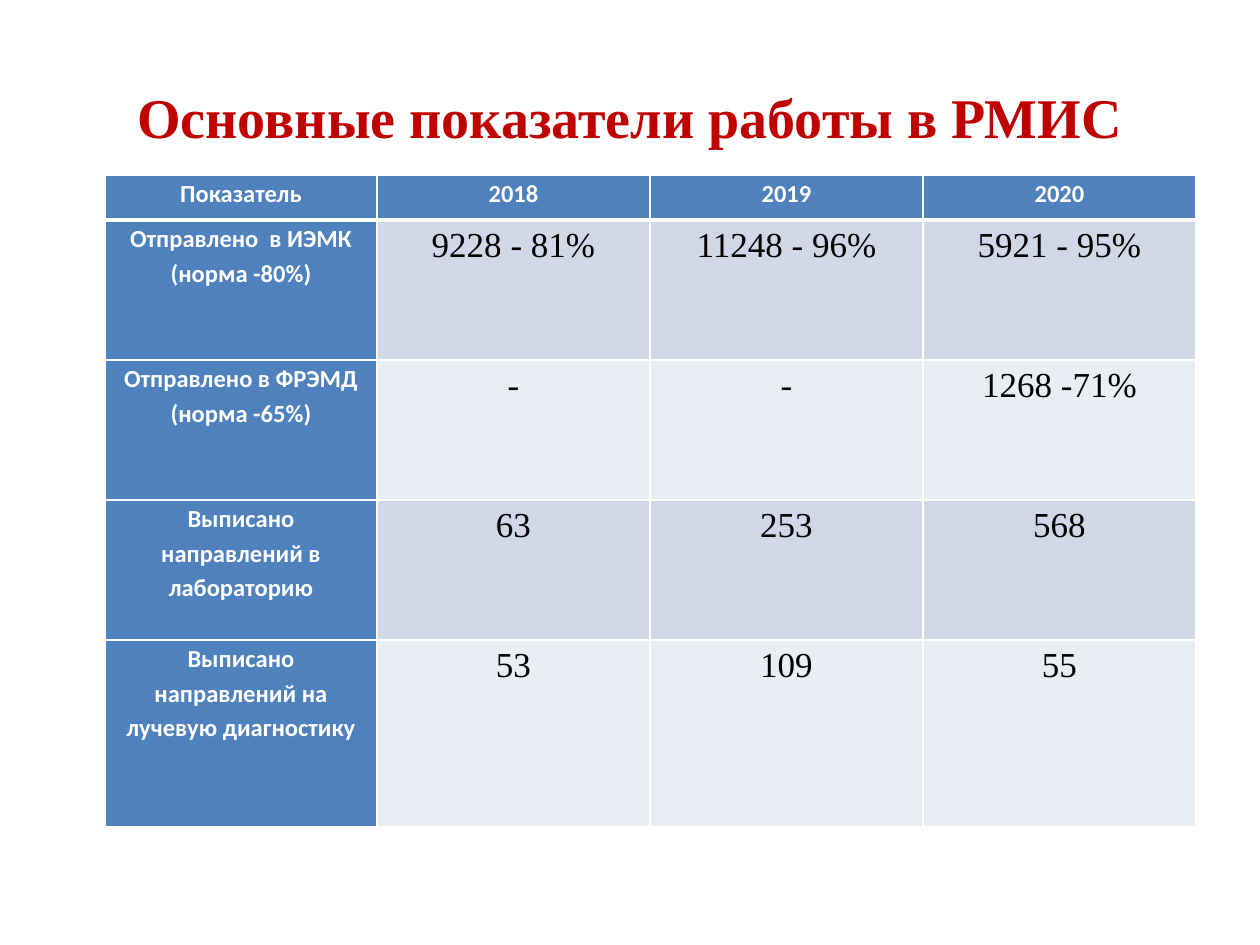
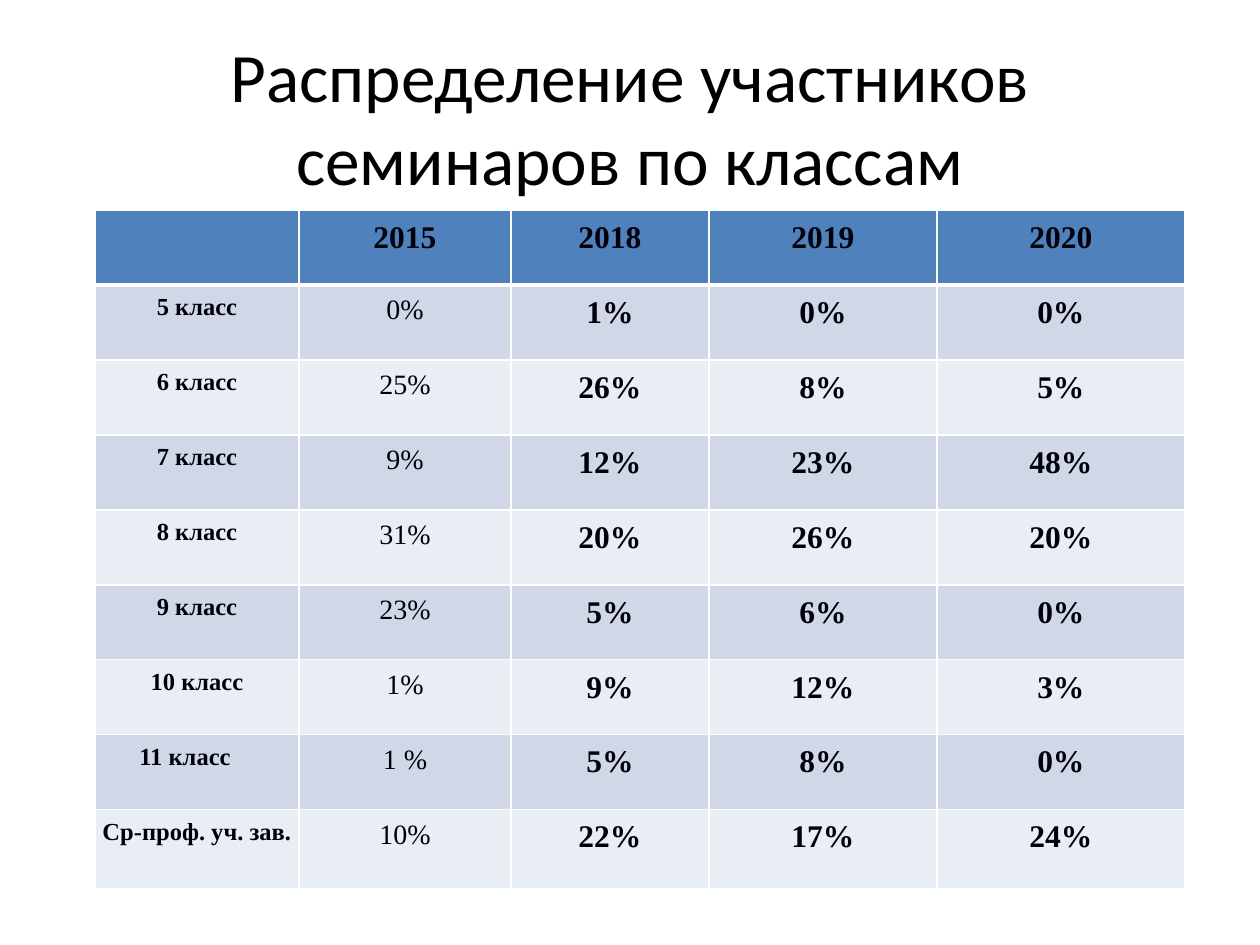
"""Build two slides, each a title over a banded table."""
from lxml import etree
from pptx import Presentation
from pptx import util as u
from pptx.dml.color import RGBColor
from pptx.enum import text
from pptx.oxml import ns

PX = 914400 / 126
SERIF, SANS = "Times New Roman", "Calibri"
RED = RGBColor(0xC0, 0x00, 0x00)
BLACK = RGBColor(0x00, 0x00, 0x00)
INK = RGBColor(0x00, 0x00, 0x0A)
WHITE = RGBColor(0xFF, 0xFF, 0xFF)
BLUE = RGBColor(0x4F, 0x81, 0xBD)
BANDS = [RGBColor(0xD0, 0xD8, 0xE8), RGBColor(0xE9, 0xED, 0xF4)]

TITLE_BOX = (63, 38, 1134, 157)
LABEL = (SANS, 14, WHITE, True)
FIGURE = (SERIF, 20, BLACK, False)
YEAR = (SERIF, 18, INK, True)
GRADE = (SERIF, 14, INK, True)
FIRST_YEAR = (SERIF, 16, INK, False)

WORK = {
    "title": "Основные показатели работы в РМИС",
    "title_font": (SERIF, 32, RED, True),
    "corner": (105, 175),
    "columns": [272, 273, 273, 273],
    "heights": [45, 140, 140, 140, 187],
    "margins": (9, 0),
    "space_after": 0,
    "blue_labels": True,
    "head_font": LABEL,
    "fonts": [LABEL, FIGURE, FIGURE, FIGURE],
    "indents": {},
    "rows": [
        ("Показатель", "2018", "2019", "2020"),
        ("Отправлено  в ИЭМК (норма -80%)", "9228 - 81%", "11248 - 96%", "5921 - 95%"),
        ("Отправлено в ФРЭМД (норма -65%)", "-", "-", "1268 -71%"),
        ("Выписано направлений в лабораторию", "63", "253", "568"),
        ("Выписано направлений на лучевую диагностику", "53", "109", "55"),
    ],
}

SEMINARS = {
    "title": "Распределение участников семинаров по классам",
    "title_font": (SANS, 39.6, BLACK, False),
    "corner": (95, 210),
    "columns": [204, 212, 198, 228, 248],
    "heights": [75] * 8 + [79],
    "margins": (5, 5),
    "space_after": 10,
    "blue_labels": False,
    "head_font": YEAR,
    "fonts": [GRADE, FIRST_YEAR, YEAR, YEAR, YEAR],
    "indents": {"11 класс": 24},
    "rows": [
        ("", "2015", "2018", "2019", "2020"),
        ("5 класс", "0%", "1%", "0%", "0%"),
        ("6 класс", "25%", "26%", "8%", "5%"),
        ("7 класс", "9%", "12%", "23%", "48%"),
        ("8 класс", "31%", "20%", "26%", "20%"),
        ("9 класс", "23%", "5%", "6%", "0%"),
        ("10 класс", "1%", "9%", "12%", "3%"),
        ("11 класс", "1 %", "5%", "8%", "0%"),
        ("Ср-проф. уч. зав.", "10%", "22%", "17%", "24%"),
    ],
}


def px(length):
    return u.Emu(round(length * PX))


def write(para, words, font):
    para.text = words
    para.alignment = text.PP_ALIGN.CENTER
    para.font.name, size, color, para.font.bold = font
    para.font.size = u.Pt(size)
    para.font.color.rgb = color


def add_title(page, words, font):
    box = page.shapes.add_textbox(*map(px, TITLE_BOX))
    frame = box.text_frame
    frame.word_wrap = True
    frame.vertical_anchor = text.MSO_ANCHOR.MIDDLE
    write(frame.paragraphs[0], words, font)


def add_borders(cell, top, bottom):
    properties = cell._tc.get_or_add_tcPr()
    for side, points in (("L", 1), ("R", 1), ("T", top), ("B", bottom)):
        line = etree.SubElement(properties, ns.qn(f"a:ln{side}"), w=str(u.Pt(points)))
        fill = etree.SubElement(line, ns.qn("a:solidFill"))
        etree.SubElement(fill, ns.qn("a:srgbClr"), val=str(WHITE))


def fill_cell(cell, words, row, column, data):
    across, down = data["margins"]
    cell.margin_left = px(across)
    cell.margin_right = px(across + data["indents"].get(words, 0))
    cell.margin_top = cell.margin_bottom = px(down)
    add_borders(cell, 3 if row == 1 else 1, 3 if row == 0 else 1)
    is_blue = row == 0 or (column == 0 and data["blue_labels"])
    cell.fill.solid()
    cell.fill.fore_color.rgb = BLUE if is_blue else BANDS[(row - 1) % 2]
    para = cell.text_frame.paragraphs[0]
    write(para, words, data["head_font"] if row == 0 else data["fonts"][column])
    para.line_spacing = 1.15
    para.space_after = u.Pt(data["space_after"])


def add_grid(page, data):
    columns, heights = data["columns"], data["heights"]
    place = map(px, (*data["corner"], sum(columns), sum(heights)))
    table = page.shapes.add_table(len(heights), len(columns), *place).table
    for column, width in zip(table.columns, columns):
        column.width = px(width)
    for row, height in zip(table.rows, heights):
        row.height = px(height)
    for r, words in enumerate(data["rows"]):
        for c, word in enumerate(words):
            fill_cell(table.cell(r, c), word, r, c, data)


def main():
    deck = Presentation()
    deck.slide_width, deck.slide_height = px(1260), px(945)
    for data in (WORK, SEMINARS):
        page = deck.slides.add_slide(deck.slide_layouts[6])
        add_title(page, data["title"], data["title_font"])
        add_grid(page, data)
    deck.save("out.pptx")


if __name__ == "__main__":
    main()
